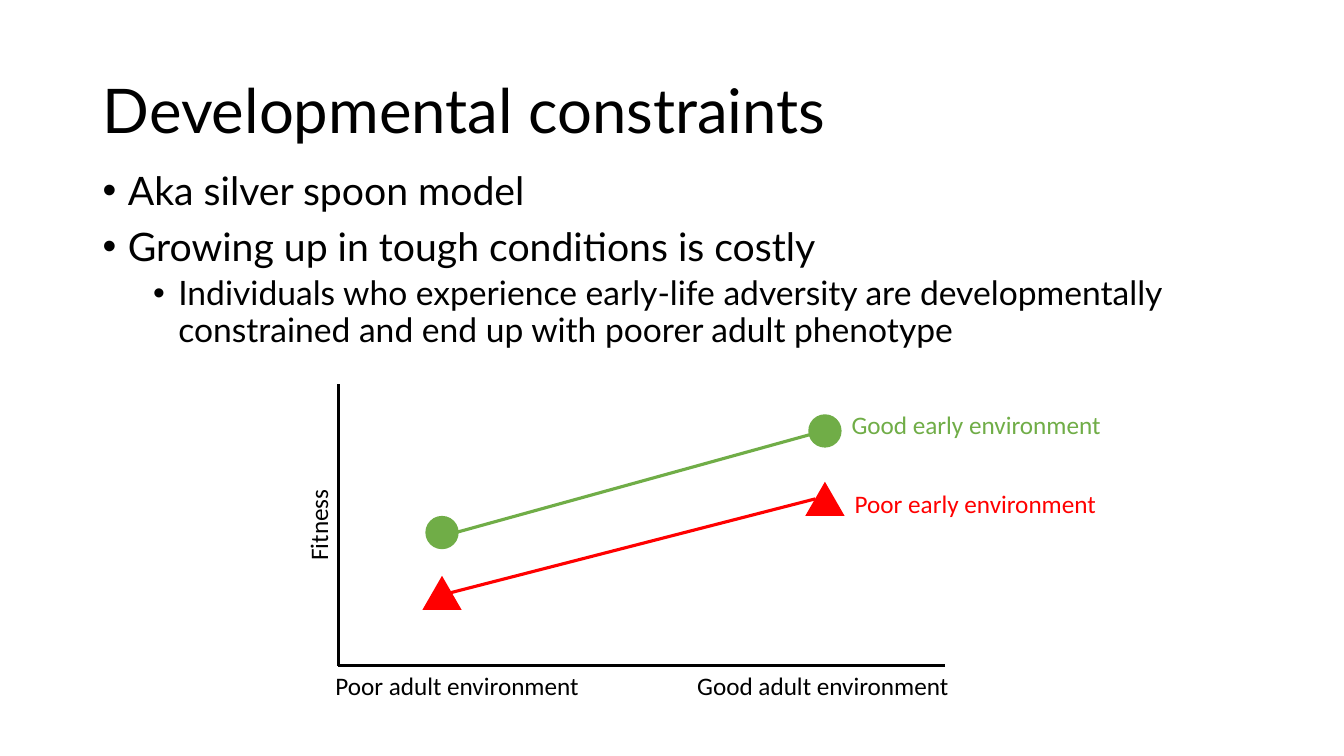
from pptx import Presentation
from pptx.util import Cm, Pt
from pptx.dml.color import RGBColor
from pptx.enum.shapes import MSO_SHAPE as Shape, MSO_CONNECTOR as Link
from pptx.enum.text import MSO_ANCHOR as Anchor, MSO_AUTO_SIZE as Fit
from pptx.oxml.ns import qn
from lxml.etree import SubElement

BLACK, GREEN, RED = "000000", "70AD47", "FF0000"


def color(code):
    return RGBColor.from_string(code)


def add_run(para, text, size, font, code=BLACK):
    run = para.add_run()
    run.text = text
    run.font.size = Pt(size)
    run.font.name = font
    run.font.color.rgb = color(code)


def add_frame(slide, x, y, w, h):
    box = slide.shapes.add_textbox(Cm(x), Cm(y), Cm(w), Cm(h))
    box.text_frame.word_wrap = True
    return box


def add_title(slide, x, y, w, h):
    frame = add_frame(slide, x, y, w, h).text_frame
    frame.vertical_anchor = Anchor.MIDDLE
    para = frame.paragraphs[0]
    para.line_spacing = 0.9
    add_run(para, "Developmental constraints", 44, "Lato")


def add_list(slide, x, y, w, h):
    frame = add_frame(slide, x, y, w, h).text_frame
    items = [
        (0, "Aka silver spoon model"),
        (0, "Growing up in tough conditions is costly"),
        (1, "Individuals who experience early-life adversity are "
            "developmentally constrained and end up with poorer adult phenotype"),
    ]
    for i, (level, text) in enumerate(items):
        para = frame.add_paragraph() if i else frame.paragraphs[0]
        para.level = level
        para.line_spacing = 0.9
        para.space_before = Pt(5 if level else 10)
        props = para._p.get_or_add_pPr()
        props.set("marL", str(Cm(0.635 + 1.27 * level)))
        props.set("indent", str(-Cm(0.635)))
        SubElement(props, qn("a:buFont")).set("typeface", "Arial")
        SubElement(props, qn("a:buChar")).set("char", "•")
        add_run(para, text, 24 if level else 28, "Lato")


def add_line(slide, x1, y1, x2, y2, code):
    line = slide.shapes.add_connector(Link.STRAIGHT, Cm(x1), Cm(y1), Cm(x2), Cm(y2))
    line.line.color.rgb = color(code)
    line.line.width = Pt(2.25)
    SubElement(line._element.spPr, qn("a:effectLst"))


def add_label(slide, x, y, w, text, code=BLACK, turn=0):
    box = add_frame(slide, x, y, w, 1.02)
    box.rotation = turn
    frame = box.text_frame
    frame.word_wrap = False
    frame.auto_size = Fit.SHAPE_TO_FIT_TEXT
    add_run(frame.paragraphs[0], text, 18, "Calibri", code)


def add_mark(slide, kind, x, y, w, h, code):
    # Centred on its data point
    mark = slide.shapes.add_shape(kind, Cm(x - w / 2), Cm(y - h / 2), Cm(w), Cm(h))
    mark.shadow.inherit = False
    mark.fill.solid()
    mark.fill.fore_color.rgb = color(code)
    mark.line.fill.background()


def add_plot(slide, x, y, w, h):
    # Axes and their labels
    add_line(slide, x, y, x, y + h, BLACK)
    add_line(slide, x + w, y + h, x, y + h, BLACK)
    add_label(slide, x - 0.33, y + h, 6.73, "Poor adult environment")
    add_label(slide, x + 8.79, y + h, 6.93, "Good adult environment")
    add_label(slide, x - 1.68, y + 3.02, 2.34, "Fitness", turn=270)

    # Series: marker, size, colour, point heights, line ends, label
    series = [
        (Shape.OVAL, 0.84, 0.84, GREEN, (3.74, 1.18), (2.7, 3.81, 12.25, 1.17),
         (12.68, 0.51, 6.86, "Good early environment")),
        (Shape.ISOSCELES_TRIANGLE, 0.99, 0.86, RED, (5.26, 2.89),
         (2.42, 5.36, 12.02, 2.89),
         (12.76, 2.49, 6.65, "Poor early environment")),
    ]
    for kind, mw, mh, code, points, ends, label in series:
        for px, py in zip((2.61, 12.26), points):
            add_mark(slide, kind, x + px, y + py, mw, mh, code)
        x1, y1, x2, y2 = ends
        add_line(slide, x + x1, y + y1, x + x2, y + y2, code)
        lx, ly, lw, text = label
        add_label(slide, x + lx, y + ly, lw, text, code)


def main():
    deck = Presentation()
    deck.slide_width, deck.slide_height = Cm(33.87), Cm(19.05)
    slide = deck.slides.add_slide(deck.slide_layouts[6])
    add_title(slide, 2.34, 1.02, 19.69, 3.68)
    add_list(slide, 2.34, 4.19, 30.91, 7.26)
    add_plot(slide, 8.53, 9.68, 15.29, 7.09)
    deck.save("out.pptx")


if __name__ == "__main__":
    main()
